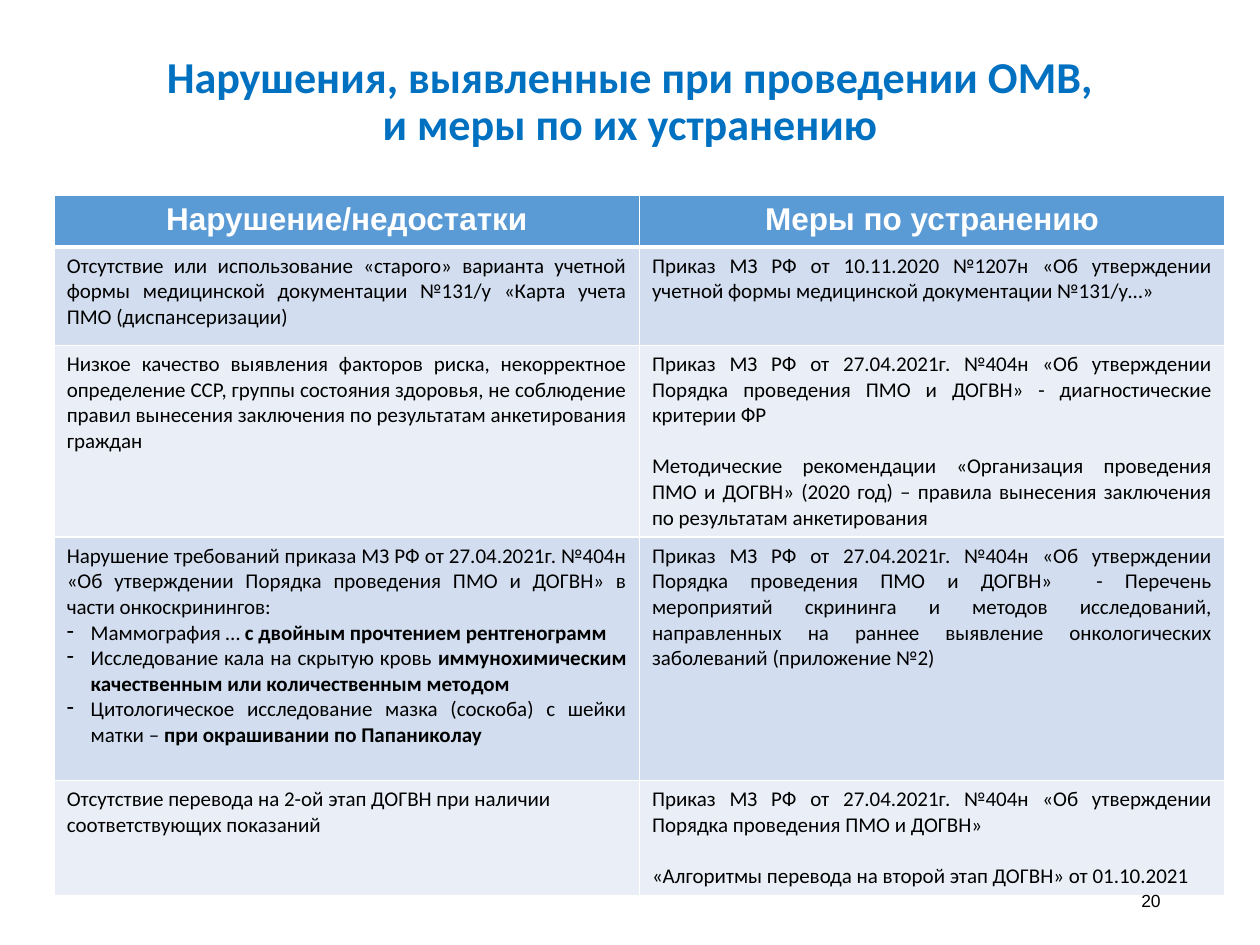
from lxml import etree
from pptx import Presentation
from pptx.dml.color import RGBColor
from pptx.enum.text import MSO_ANCHOR, MSO_AUTO_SIZE, PP_ALIGN
from pptx.oxml.ns import qn
from pptx.util import Inches, Pt

LEFT, CENTER, RIGHT, JUSTIFY = PP_ALIGN.LEFT, PP_ALIGN.CENTER, PP_ALIGN.RIGHT, PP_ALIGN.JUSTIFY
MIDDLE, NO_FIT = MSO_ANCHOR.MIDDLE, MSO_AUTO_SIZE.NONE
WIDTH, HEIGHT = Inches(10), Inches(7.5)

COLORS = {"title": "0070C0", "header": "5B9BD5", "odd": "D2DEEF", "even": "EAEFF7",
          "white": "FFFFFF", "black": "000000"}
TITLE_FORMAT = {"name": "Calibri", "size": Pt(25.2), "bold": True, "color": "title"}
HEADER_FORMAT = {"name": "Arial", "size": Pt(18), "bold": True, "color": "white"}
BODY_FORMAT = {"name": "Calibri", "size": Pt(12), "bold": False, "color": "black"}
NUMBER_FORMAT = {"name": "Arial", "size": Pt(10), "bold": False, "color": "black"}
LINE_GAP = Pt(14.65)  # one line of body text
HANGING = Inches(0.19)

TITLE = "Нарушения, выявленные при проведении ОМВ,\vи меры по их устранению"
HEADERS = ["Нарушение/недостатки", "Меры по устранению"]
ORDER = "Приказ МЗ РФ от 27.04.2021г. №404н «Об утверждении Порядка проведения ПМО и ДОГВН»"


def item(text, bold_text="", align=JUSTIFY, bullet=False, gap=False):
    return {"text": text, "bold_text": bold_text, "align": align, "bullet": bullet, "gap": gap}


ROWS = [
    ([item("Отсутствие или использование «старого» варианта учетной формы медицинской "
           "документации №131/у «Карта учета ПМО (диспансеризации)")],
     [item("Приказ МЗ РФ от 10.11.2020 №1207н «Об утверждении учетной формы медицинской "
           "документации №131/у…»")]),
    ([item("Низкое качество выявления факторов риска, некорректное определение ССР, группы "
           "состояния здоровья, не соблюдение правил вынесения заключения по результатам "
           "анкетирования граждан")],
     [item(ORDER + " - диагностические критерии ФР"),
      item("Методические рекомендации «Организация проведения ПМО и ДОГВН» (2020 год) – "
           "правила вынесения заключения по результатам анкетирования", gap=True)]),
    ([item("Нарушение требований приказа МЗ РФ от 27.04.2021г. №404н «Об утверждении Порядка "
           "проведения ПМО и ДОГВН» в части онкоскринингов:"),
      item("Маммография … ", "с двойным прочтением рентгенограмм", bullet=True),
      item("Исследование кала на скрытую кровь ",
           "иммунохимическим качественным или количественным методом", bullet=True),
      item("Цитологическое исследование мазка (соскоба) с шейки матки – ",
           "при окрашивании по Папаниколау", bullet=True)],
     [item(ORDER + "  - Перечень мероприятий скрининга и методов исследований, направленных "
           "на раннее выявление онкологических заболеваний (приложение №2)")]),
    ([item("Отсутствие перевода на 2-ой этап ДОГВН при наличии соответствующих показаний",
           align=LEFT)],
     [item(ORDER),
      item("«Алгоритмы перевода на второй этап ДОГВН» от 01.10.2021", align=LEFT, gap=True)]),
]
ROW_HEIGHTS = [0.41, 0.78, 1.52, 1.93, 0.91]


def rgb(name):
    return RGBColor.from_string(COLORS[name])


def add_run(paragraph, text, text_format, **changes):
    run = paragraph.add_run()
    run.text = text
    for key, value in {**text_format, **changes}.items():
        if key == "color":
            run.font.color.rgb = rgb(value)
        else:
            setattr(run.font, key, value)


def set_bullet(paragraph):
    properties = paragraph._p.get_or_add_pPr()
    properties.set("marL", str(HANGING))
    properties.set("indent", str(-HANGING))
    etree.SubElement(properties, qn("a:buChar"), char="-")


def style_cell(cell, fill, bottom_width=1):
    properties = cell._tc.get_or_add_tcPr()
    for side, width in (("L", 1), ("R", 1), ("T", 1), ("B", bottom_width)):
        line = etree.SubElement(properties, qn("a:ln" + side), w=str(Pt(width)))
        solid = etree.SubElement(line, qn("a:solidFill"))
        etree.SubElement(solid, qn("a:srgbClr"), val=COLORS["white"])
    cell.fill.solid()
    cell.fill.fore_color.rgb = rgb(fill)


def fill_cell(cell, items):
    frame = cell.text_frame
    for index, entry in enumerate(items):
        paragraph = frame.add_paragraph() if index else frame.paragraphs[0]
        paragraph.alignment = entry["align"]
        if entry["gap"]:
            paragraph.space_before = LINE_GAP
        if entry["bullet"]:
            set_bullet(paragraph)
        add_run(paragraph, entry["text"], BODY_FORMAT)
        if entry["bold_text"]:
            add_run(paragraph, entry["bold_text"], BODY_FORMAT, bold=True)


def place_title(slide, left, top, width, height):
    title = slide.shapes.title
    title.left, title.top, title.width, title.height = left, top, width, height
    frame = title.text_frame
    frame.auto_size, frame.vertical_anchor, frame.word_wrap = NO_FIT, MIDDLE, True
    paragraph = frame.paragraphs[0]
    paragraph.alignment, paragraph.line_spacing = CENTER, 0.9
    first, second = TITLE.split("\v")
    add_run(paragraph, first, TITLE_FORMAT)
    paragraph.add_line_break()
    add_run(paragraph, second, TITLE_FORMAT)


def place_table(slide, left, top, width, height):
    table = slide.shapes.add_table(len(ROWS) + 1, len(HEADERS), left, top, width, height).table
    for column in table.columns:
        column.width = width // len(HEADERS)
    for row, share in zip(table.rows, ROW_HEIGHTS):
        row.height = int(height * share / sum(ROW_HEIGHTS))
    # Header row
    for column, text in enumerate(HEADERS):
        cell = table.cell(0, column)
        style_cell(cell, "header", bottom_width=3)
        paragraph = cell.text_frame.paragraphs[0]
        paragraph.alignment = CENTER
        add_run(paragraph, text, HEADER_FORMAT)
    # Banded body rows
    for row, contents in enumerate(ROWS, start=1):
        for column, items in enumerate(contents):
            cell = table.cell(row, column)
            style_cell(cell, "odd" if row % 2 else "even")
            fill_cell(cell, items)


def place_number(slide, left, top, width, height):
    frame = slide.shapes.add_textbox(left, top, width, height).text_frame
    frame.word_wrap, frame.vertical_anchor = True, MIDDLE
    paragraph = frame.paragraphs[0]
    paragraph.alignment = RIGHT
    add_run(paragraph, "20", NUMBER_FORMAT)


def share_box(left, top, width, height):
    return int(WIDTH * left), int(HEIGHT * top), int(WIDTH * width), int(HEIGHT * height)


def main():
    presentation = Presentation()
    presentation.slide_width, presentation.slide_height = WIDTH, HEIGHT
    slide = presentation.slides.add_slide(presentation.slide_layouts[5])
    place_title(slide, *share_box(0.069, 0.0533, 0.862, 0.1107))
    place_table(slide, *share_box(0.043, 0.2067, 0.929, 0.74))
    place_number(slide, *share_box(0.706, 0.9267, 0.225, 0.0533))
    presentation.save("out.pptx")


if __name__ == "__main__":
    main()
